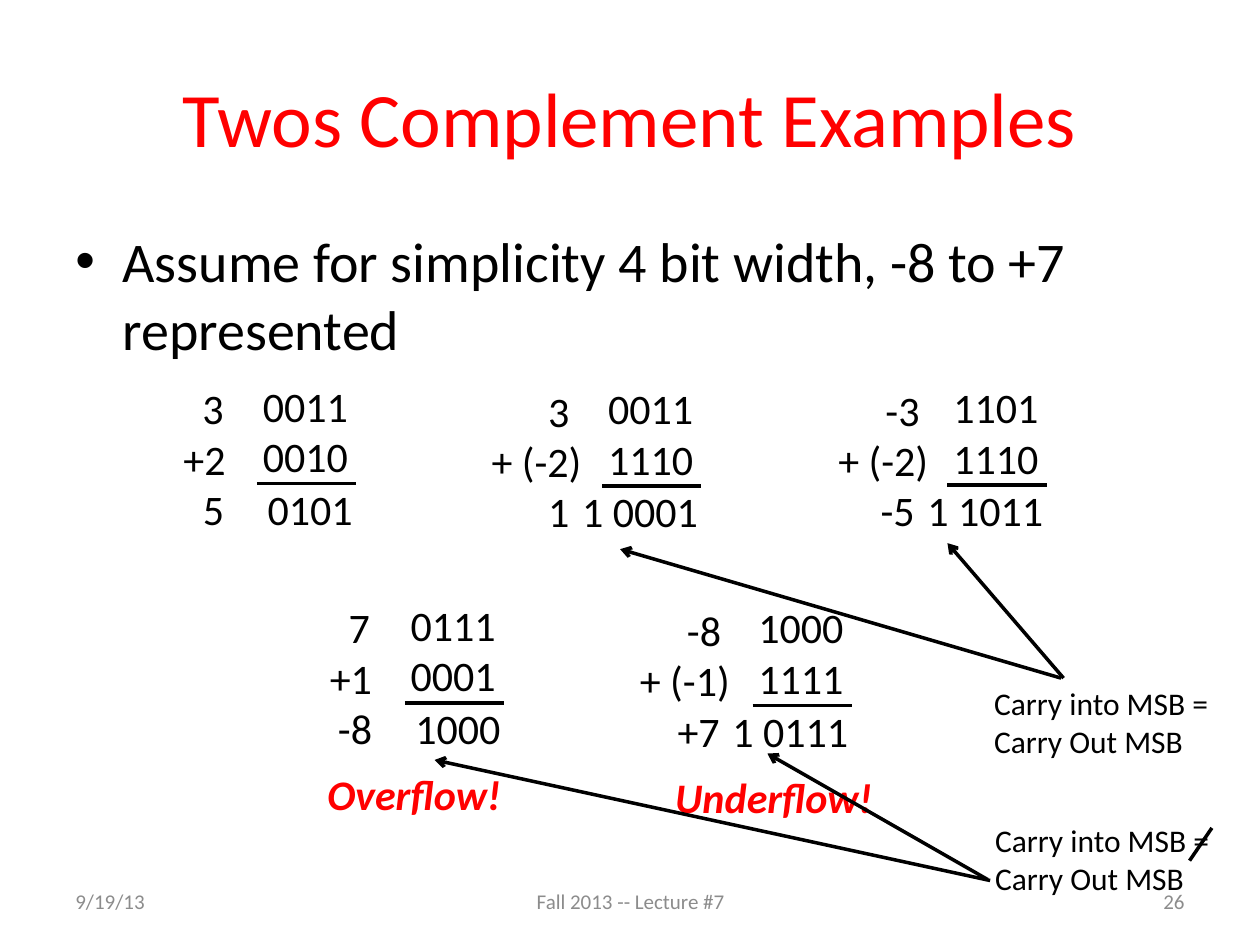
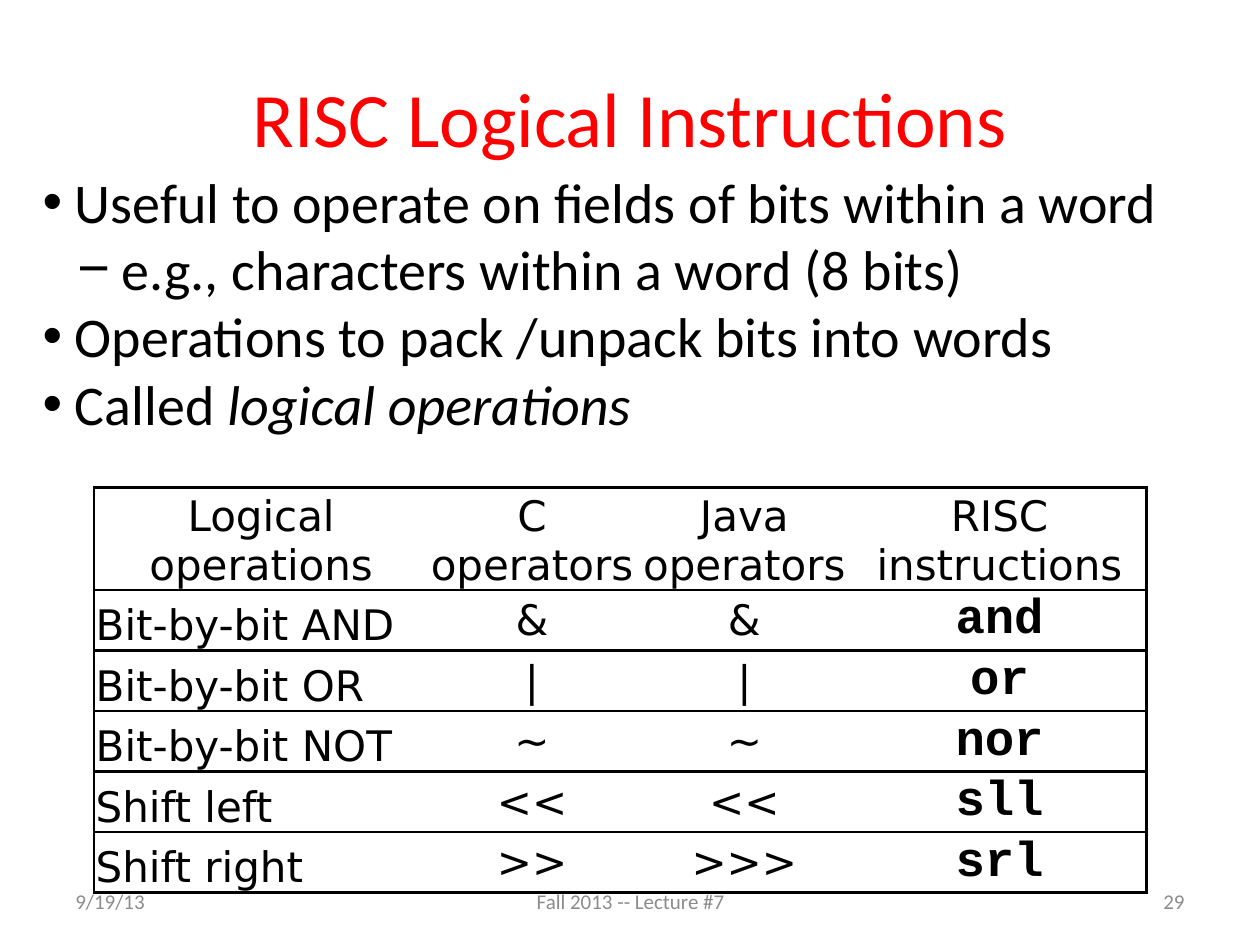
from dataclasses import dataclass

from lxml import etree
from pptx import Presentation
from pptx.dml.color import RGBColor
from pptx.enum.shapes import MSO_CONNECTOR
from pptx.enum.text import MSO_ANCHOR, PP_ALIGN
from pptx.oxml.ns import qn
from pptx.util import Cm, Pt

LEFT, CENTER, RIGHT = PP_ALIGN.LEFT, PP_ALIGN.CENTER, PP_ALIGN.RIGHT
TOP, MIDDLE, BOTTOM = MSO_ANCHOR.TOP, MSO_ANCHOR.MIDDLE, MSO_ANCHOR.BOTTOM
STRAIGHT = MSO_CONNECTOR.STRAIGHT


@dataclass(frozen=True)
class Style:
    size: int
    color: str = "000000"
    font: str = "Calibri"
    bold: bool = False
    italic: bool = False


@dataclass(frozen=True)
class Theme:
    line_color: str = "000000"
    line_width: float = 2
    border_width: float = 1.5
    title: Style = Style(44, "FF0000")
    body: Style = Style(32)
    emphasis: Style = Style(32, italic=True)
    digits: Style = Style(24)
    verdict: Style = Style(24, "FF0000", bold=True, italic=True)
    note: Style = Style(18)
    footer: Style = Style(12, "8C8C8C")
    cell: Style = Style(24, font="DejaVu Sans")
    code: Style = Style(28, font="Courier New", bold=True)


THEME = Theme()


# All lengths in the tuples below are centimetres
@dataclass(frozen=True)
class Box:
    left: float
    top: float
    width: float
    height: float

    def lengths(self) -> tuple:
        return Cm(self.left), Cm(self.top), Cm(self.width), Cm(self.height)


@dataclass(frozen=True)
class Bullet:
    text: str
    mark: str
    margin: float
    hanging: float
    emphasis: str = ""


@dataclass(frozen=True)
class Sum:
    left: float
    top: float
    decimals: tuple
    indents: tuple
    decimal_shift: float
    bits: tuple
    decimal_result: str
    bit_result: str
    verdict: str = ""


@dataclass(frozen=True)
class Line:
    start: tuple
    end: tuple
    arrow: bool = False


TITLE_BOX = Box(1.27, 0.76, 22.86, 3.18)
FOOTER_TOP, FOOTER_HEIGHT = 17.65, 1.02

ASSUMPTION = [
    Bullet("Assume for simplicity 4 bit width, -8 to +7 represented", "•", 0.95, 0.95),
]
SUMS = [
    Sum(5.05, 7.54, ("3", "+2"), (0.38, 0), 1.6, ("0011", "0010"), "5", "0101"),
    Sum(12.01, 7.59, ("3", "+ (-2)"), (1.33, 0.19), 2.54,
        ("0011", "1110"), "1", "1 0001"),
    Sum(18.97, 7.57, ("-3", "+ (-2)"), (1.14, 0.19), 2.51,
        ("1101", "1110"), "-5", "1 1011"),
    Sum(8.03, 11.96, ("7", "+1"), (0.38, 0), 1.63,
        ("0111", "0001"), "-8", "1000", "Overflow!"),
    Sum(15.04, 12.01, ("-8", "+ (-1)"), (0.95, 0), 2.39,
        ("1000", "1111"), "+7", "1 0111", "Underflow!"),
]
CARRY_NOTE = ("Carry into MSB =", "Carry Out MSB")
CARRY_BOXES = [Box(19.79, 13.67, 5, 1.8), Box(19.81, 16.43, 5, 1.8)]
CARRY_LINES = [
    Line((21.44, 13.67), (19.1, 10.95), arrow=True),
    Line((21.39, 13.67), (12.5, 11.07), arrow=True),
    Line((23.98, 17.35), (24.43, 16.69)),
    Line((19.91, 17.73), (15.47, 15.19), arrow=True),
    Line((19.96, 17.75), (8.76, 15.32), arrow=True),
]

LOGIC_BULLETS = [
    Bullet("Useful to operate on fields of bits within a word", "•", 0.65, 0.65),
    Bullet("e.g., characters within a word (8 bits)", "−", 1.6, 0.9),
    Bullet("Operations to pack /unpack bits into words", "•", 0.65, 0.65),
    Bullet("Called ", "•", 0.65, 0.65, "logical operations"),
]
OPERATOR_ROWS = [
    ("Logical operations", "C\noperators", "Java operators", "RISC instructions"),
    ("Bit-by-bit AND", "&", "&", "and"),
    ("Bit-by-bit OR", "|", "|", "or"),
    ("Bit-by-bit NOT", "~", "~", "nor"),
    ("Shift left", "<<", "<<", "sll"),
    ("Shift right", ">>", ">>>", "srl"),
]
COLUMN_WIDTHS = (6.73, 4.19, 4.37, 5.92)
HEADER_HEIGHT, ROW_HEIGHT = 1.91, 1.22


# Text helpers
def format_span(span, style: Style) -> None:
    font = span.font
    font.name, font.size = style.font, Pt(style.size)
    font.bold, font.italic = style.bold, style.italic
    font.color.rgb = RGBColor.from_string(style.color)


def format_frame(frame, style: Style, align=LEFT) -> None:
    for para in frame.paragraphs:
        para.alignment = align
        for span in para.runs:
            format_span(span, style)


def set_indent(para, margin: float, hanging: float = 0) -> None:
    properties = para._p.get_or_add_pPr()
    properties.set("marL", str(Cm(margin)))
    properties.set("indent", str(-Cm(hanging)))


def add_text(page, box: Box, lines: tuple, style: Style, align=LEFT, anchor=TOP):
    frame = page.shapes.add_textbox(*box.lengths()).text_frame
    frame.word_wrap = True
    frame.vertical_anchor = anchor
    frame.text = "\n".join(lines)
    format_frame(frame, style, align)
    return frame


def add_bullets(page, box: Box, bullets: list) -> None:
    frame = add_text(page, box, tuple(item.text for item in bullets), THEME.body)
    for para, item in zip(frame.paragraphs, bullets):
        set_indent(para, item.margin, item.hanging)
        properties = para._p.get_or_add_pPr()
        etree.SubElement(properties, qn("a:buFont"), typeface="Arial")
        etree.SubElement(properties, qn("a:buChar"), char=item.mark)
        if item.emphasis:
            span = para.add_run()
            span.text = item.emphasis
            format_span(span, THEME.emphasis)


# Lines and arrows
def add_line(page, line: Line) -> None:
    ends = [Cm(value) for value in line.start + line.end]
    connector = page.shapes.add_connector(STRAIGHT, *ends)
    connector.line.width = Pt(THEME.line_width)
    connector.line.color.rgb = RGBColor.from_string(THEME.line_color)
    properties = connector._element.spPr
    if line.arrow:
        etree.SubElement(properties.find(qn("a:ln")), qn("a:tailEnd"), type="arrow")
    etree.SubElement(properties, qn("a:effectLst"))


# Shared page frame: title and footers
def add_page(deck, title: str, number: str):
    page = deck.slides.add_slide(deck.slide_layouts[5])
    heading = page.shapes.title
    heading.left, heading.top, heading.width, heading.height = TITLE_BOX.lengths()
    heading.text_frame.text = title
    heading.text_frame.vertical_anchor = MIDDLE
    format_frame(heading.text_frame, THEME.title, CENTER)
    for left, width, text, align in (
        (1.27, 5.92, "9/19/13", LEFT),
        (8.69, 8.05, "Fall 2013 -- Lecture #7", CENTER),
        (18.21, 5.92, number, RIGHT),
    ):
        box = Box(left, FOOTER_TOP, width, FOOTER_HEIGHT)
        add_text(page, box, (text,), THEME.footer, align, MIDDLE)
    return page


# One worked addition: decimal column, bit column, rule, results
def add_sum(page, item: Sum) -> None:
    left, top = item.left, item.top
    decimal_box = Box(left - item.decimal_shift, top + 0.05, 2.7, 2.31)
    decimals = add_text(page, decimal_box, item.decimals, THEME.digits)
    for para, indent in zip(decimals.paragraphs, item.indents):
        set_indent(para, indent)
    add_text(page, Box(left, top, 2.4, 2.31), item.bits, THEME.digits)
    add_line(page, Line((left + 0.13, top + 2.21), (left + 2.13, top + 2.21)))
    for right, width, text in ((-0.28, 1.5, item.decimal_result),
                               (2.31, 3.1, item.bit_result)):
        box = Box(left + right - width, top + 2.08, width, 1.27)
        add_text(page, box, (text,), THEME.digits, RIGHT)
    if item.verdict:
        box = Box(left - 1.68, top + 3.41, 4.9, 1.27)
        add_text(page, box, (item.verdict,), THEME.verdict)


# Operator table
def set_borders(cell, visible: set) -> None:
    properties = cell._tc.get_or_add_tcPr()
    for side in "LRTB":
        border = etree.SubElement(properties, qn(f"a:ln{side}"),
                                  w=str(Pt(THEME.border_width)))
        if side in visible:
            fill = etree.SubElement(border, qn("a:solidFill"))
            etree.SubElement(fill, qn("a:srgbClr"), val=THEME.line_color)
        else:
            etree.SubElement(border, qn("a:noFill"))


def add_operator_table(page) -> None:
    rows, last = len(OPERATOR_ROWS), len(COLUMN_WIDTHS) - 1
    box = Box(1.9, 9.83, sum(COLUMN_WIDTHS), HEADER_HEIGHT + (rows - 1) * ROW_HEIGHT)
    table = page.shapes.add_table(rows, last + 1, *box.lengths()).table
    table.first_row = table.horz_banding = False
    for column, width in zip(table.columns, COLUMN_WIDTHS):
        column.width = Cm(width)
    for r, texts in enumerate(OPERATOR_ROWS):
        table.rows[r].height = Cm(ROW_HEIGHT if r else HEADER_HEIGHT)
        for c, text in enumerate(texts):
            cell = table.cell(r, c)
            cell.text_frame.text = text
            cell.margin_left = cell.margin_right = cell.margin_top = Cm(0.03)
            cell.margin_bottom = 0
            cell.vertical_anchor = MIDDLE if r and c else BOTTOM
            format_frame(cell.text_frame,
                         THEME.code if r and c == last else THEME.cell,
                         LEFT if r and not c else CENTER)
            set_borders(cell, {"T", "B"} | {0: {"L"}, last: {"R"}}.get(c, set()))
            cell.fill.background()


# Slides
def build_examples(deck) -> None:
    page = add_page(deck, "Twos Complement Examples", "26")
    add_bullets(page, Box(1.27, 4.45, 22.86, 3.15), ASSUMPTION)
    for item in SUMS:
        add_sum(page, item)
    for box in CARRY_BOXES:
        add_text(page, box, CARRY_NOTE, THEME.note)
    for line in CARRY_LINES:
        add_line(page, line)


def build_instructions(deck) -> None:
    page = add_page(deck, "RISC Logical Instructions", "29")
    add_operator_table(page)
    add_bullets(page, Box(0.61, 3.25, 24.18, 5.89), LOGIC_BULLETS)


def main() -> None:
    deck = Presentation()
    deck.slide_width, deck.slide_height = Cm(25.4), Cm(19.05)
    build_examples(deck)
    build_instructions(deck)
    deck.save("out.pptx")


if __name__ == "__main__":
    main()
